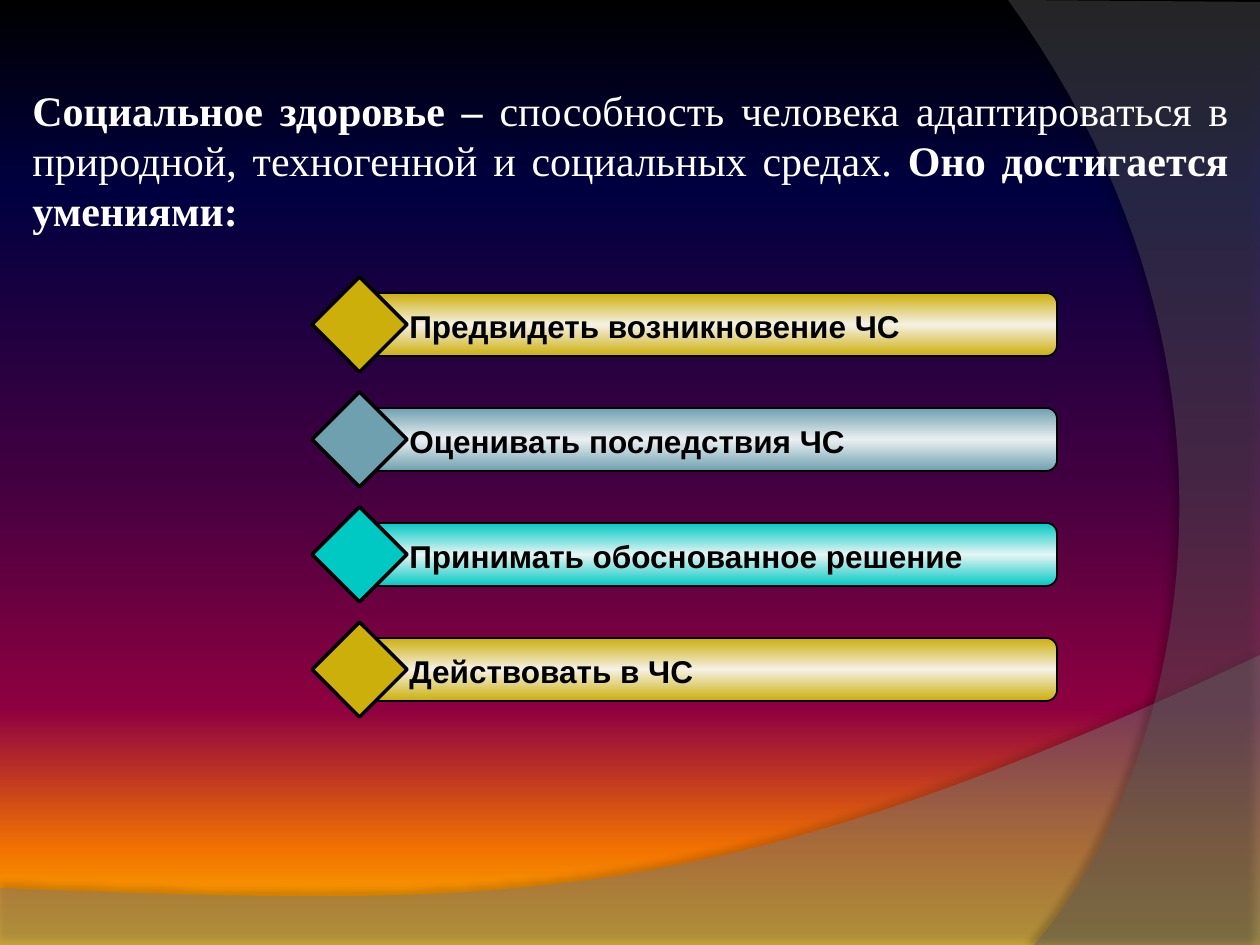
import pptx
import pptx.dml.color
import pptx.enum.shapes
import pptx.enum.text
import pptx.oxml
import pptx.oxml.ns
import pptx.util
from lxml import etree

SCALE = 914400 / 126  # EMU per px
SHAPE = pptx.enum.shapes.MSO_SHAPE
ALIGN = pptx.enum.text.PP_ALIGN
qn = pptx.oxml.ns.qn


def emu(px):
    return pptx.util.Emu(round(px * SCALE))


def color(value):
    return pptx.dml.color.RGBColor.from_string(value)


def curve(start, control_1, control_2, end, steps=48):
    """Points along a cubic curve, without its start."""
    points = []
    for step in range(1, steps + 1):
        t = step / steps
        weights = ((1 - t) ** 3, 3 * t * (1 - t) ** 2, 3 * t ** 2 * (1 - t), t ** 3)
        corners = (start, control_1, control_2, end)
        points.append(tuple(sum(w * corner[axis] for w, corner in zip(weights, corners))
                            for axis in (0, 1)))
    return points


class SlideBuilder:
    heading = {"name": "Times New Roman", "size": pptx.util.Pt(24)}
    label = {"name": "Arial", "size": pptx.util.Pt(18), "bold": True}
    frame_format = {"word_wrap": True,
                    "auto_size": pptx.enum.text.MSO_AUTO_SIZE.SHAPE_TO_FIT_TEXT}

    def __init__(self, slide):
        self.slide = slide
        self.shapes = slide.shapes

    def start_group(self):
        self.shapes = self.slide.shapes.add_group_shape().shapes

    def gradient(self, fill, owner, stops):
        """Fill from top to bottom with (percent, colour) stops."""
        fill.gradient()
        fill.gradient_angle = 270
        stop_list = owner.find(".//" + qn("a:gsLst"))
        for stop in list(stop_list):
            stop_list.remove(stop)
        for percent, value in stops:
            stop = etree.SubElement(stop_list, qn("a:gs"), pos=str(percent * 1000))
            etree.SubElement(stop, qn("a:srgbClr"), val=value)

    def background(self, stops):
        self.gradient(self.slide.background.fill, self.slide._element, stops)

    def wave(self, points, fill, opacity, shadow_opacity, distance, direction):
        """Translucent outline with a soft shadow."""
        corners = [(emu(x), emu(y)) for x, y in points]
        builder = self.shapes.build_freeform(*corners[0], scale=1.0)
        builder.add_line_segments(corners[1:], close=True)
        shape = builder.convert_to_shape()
        shape.line.fill.background()
        shape.fill.solid()
        shape.fill.fore_color.rgb = color(fill)
        fill_color = shape._element.spPr.find(".//" + qn("a:srgbClr"))
        etree.SubElement(fill_color, qn("a:alpha"), val=str(opacity * 1000))
        shape.shadow.inherit = False
        effects = shape._element.spPr.find(qn("a:effectLst"))
        shadow = etree.SubElement(
            effects, qn("a:outerShdw"), blurRad=str(pptx.util.Pt(4)),
            dist=str(pptx.util.Pt(distance)), dir=str(direction * 60000),
            algn="ctr", rotWithShape="0")
        shadow_color = etree.SubElement(shadow, qn("a:srgbClr"), val="000000")
        etree.SubElement(shadow_color, qn("a:alpha"), val=str(shadow_opacity * 1000))

    def shape(self, kind, left, top, width, height, line_width):
        shape = self.shapes.add_shape(kind, emu(left), emu(top), emu(width), emu(height))
        shape.shadow.inherit = False
        shape.line.color.rgb = color("000000")
        shape.line.width = pptx.util.Pt(line_width)
        return shape

    def bar(self, left, top, width, height, edge, middle):
        shape = self.shape(SHAPE.ROUNDED_RECTANGLE, left, top, width, height, 1)
        shape.adjustments[0] = 0.17
        self.gradient(shape.fill, shape._element, [(0, edge), (50, middle), (100, edge)])

    def diamond(self, left, top, size, fill):
        shape = self.shape(SHAPE.DIAMOND, left, top, size, size, 2)
        shape.fill.solid()
        shape.fill.fore_color.rgb = color(fill)

    def text(self, left, top, width, height, runs, style, text_color, align=ALIGN.LEFT):
        """Text box of one paragraph; runs are (text, font changes)."""
        box = self.shapes.add_textbox(emu(left), emu(top), emu(width), emu(height))
        for name, value in self.frame_format.items():
            setattr(box.text_frame, name, value)
        paragraph = box.text_frame.paragraphs[0]
        paragraph.alignment = align
        for text, changes in runs:
            run = paragraph.add_run()
            run.text = text
            run.font.color.rgb = color(text_color)
            for name, value in {**style, **changes}.items():
                setattr(run.font, name, value)


def main():
    presentation = pptx.Presentation()
    presentation.slide_width = emu(1260)
    presentation.slide_height = emu(945)
    builder = SlideBuilder(presentation.slides.add_slide(presentation.slide_layouts[6]))

    # Background with two waves
    builder.background([(0, "000000"), (20, "000040"), (50, "400040"),
                        (75, "8F0040"), (90, "F27300"), (100, "FFBF00")])
    bottom_wave = [(0, 888), (0, 946), (1260, 946), (1260, 655)]
    bottom_wave += curve((1260, 655), (704, 919), (493, 906), (0, 888))
    builder.wave(bottom_wave, "7F7F7F", 45, 35, 3.5, 270)
    right_wave = [(1260, 2), (1260, 945), (1034, 945)]
    right_wave += curve((1034, 945), (1178, 780), (1283, 378), (1008, 0))
    builder.wave(right_wave, "5E5E5E", 40, 45, 4, 180)

    # Definition
    builder.text(20, 78, 1221, 165, [
        ("Социальное здоровье – ", {"bold": True}),
        ("способность человека адаптироваться в природной, техногенной "
         "и социальных средах. ", {"bold": False}),
        ("Оно достигается умениями:", {"bold": True}),
    ], builder.heading, "FFFFFF", ALIGN.JUSTIFY)

    # Skills: bar, diamond and label in each row
    gold, blue, teal = ("CCAF0A", "F5F1E6"), ("6EA0B0", "EAEFF1"), ("00C8C3", "E6F5F4")
    skills = [
        ("Предвидеть возникновение ЧС", gold, 680),
        ("Оценивать последствия ЧС", blue, 680),
        ("Принимать обоснованное решение", teal, 640),
        ("Действовать в ЧС", gold, 571),
    ]
    for row, (skill, (edge, middle), label_width) in enumerate(skills):
        top = 293 + 115 * row
        builder.start_group()
        builder.bar(365, top, 692, 63, edge, middle)
        builder.diamond(312, top - 16, 95, edge)
        builder.text(397, top + 8, label_width, 50, [(skill, {})], builder.label, "000000")

    presentation.save("out.pptx")


if __name__ == "__main__":
    main()
